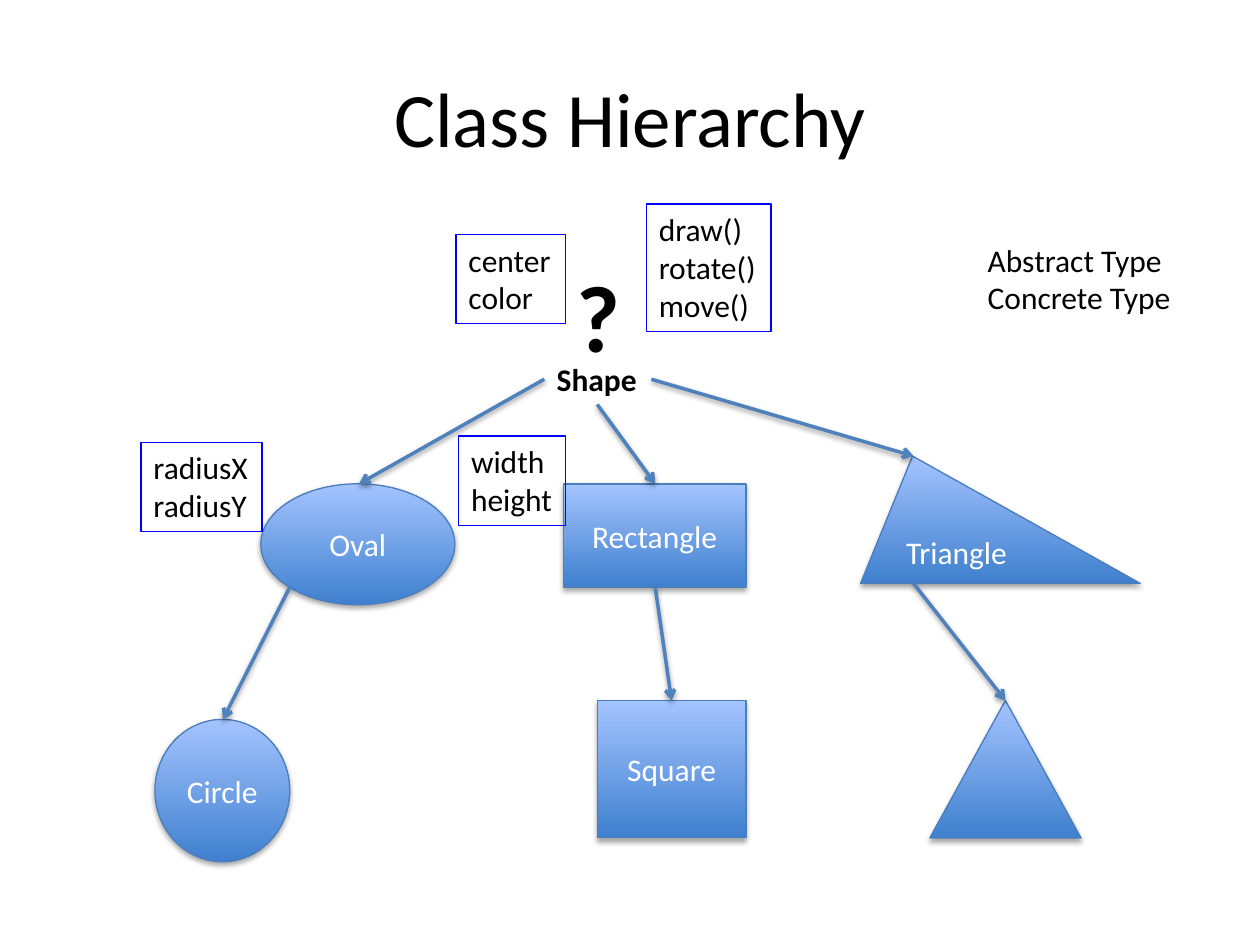
from lxml import etree
from pptx import Presentation
from pptx.dml.color import RGBColor
from pptx.enum.shapes import MSO_CONNECTOR, MSO_SHAPE
from pptx.enum.text import MSO_ANCHOR, MSO_AUTO_SIZE, PP_ALIGN
from pptx.oxml.ns import qn
from pptx.util import Emu, Pt

EMU_PER_PX = 9144  # 100 px to the inch
TITLE_ONLY = 5
OVAL, RECT, TRIANGLE = MSO_SHAPE.OVAL, MSO_SHAPE.RECTANGLE, MSO_SHAPE.ISOSCELES_TRIANGLE
STRAIGHT = MSO_CONNECTOR.STRAIGHT
LEFT, CENTER = PP_ALIGN.LEFT, PP_ALIGN.CENTER
TOP, MIDDLE = MSO_ANCHOR.TOP, MSO_ANCHOR.MIDDLE
FIT_SHAPE = MSO_AUTO_SIZE.SHAPE_TO_FIT_TEXT


def px(length):
    return Emu(length * EMU_PER_PX)


def rgb(color):
    return RGBColor.from_string(color)


class Diagram:
    font = "Calibri"
    black, white = "000000", "FFFFFF"
    fill_bottom, fill_top, outline = "3F80CE", "A4C4FF", "4B7EBC"
    arrow_color, member_border = "4F81BD", "0000FF"

    def __init__(self, slide):
        self.slide = slide

    def add_lines(self, frame, lines, color, size=18, bold=False, align=LEFT, anchor=TOP):
        frame.vertical_anchor = anchor
        for index, line in enumerate(lines):
            paragraph = frame.add_paragraph() if index else frame.paragraphs[0]
            paragraph.alignment = align
            run = paragraph.add_run()
            run.text = line
            run.font.name, run.font.size, run.font.bold = self.font, Pt(size), bold
            run.font.color.rgb = rgb(color)

    def shadow(self, effects, opacity, distance):
        outer = etree.SubElement(effects, qn("a:outerShdw"), blurRad=str(Pt(3.1)),
                                 dist=str(Pt(distance)), dir="5400000", rotWithShape="0")
        color = etree.SubElement(outer, qn("a:srgbClr"), val=self.black)
        etree.SubElement(color, qn("a:alpha"), val=str(opacity * 1000))

    def title(self, text, box):
        title = self.slide.shapes.title
        title.left, title.top, title.width, title.height = map(px, box)
        self.add_lines(title.text_frame, [text], self.black, 44, align=CENTER, anchor=MIDDLE)

    def label(self, lines, box, size=18, bold=False):
        frame = self.slide.shapes.add_textbox(*map(px, box)).text_frame
        frame.word_wrap, frame.auto_size = False, FIT_SHAPE
        self.add_lines(frame, lines, self.black, size, bold)

    def members(self, lines, box):
        border = self.slide.shapes.add_shape(RECT, *map(px, box))
        border.shadow.inherit = False
        border.fill.background()
        border.line.color.rgb = rgb(self.member_border)
        border.line.width = Pt(0.75)
        frame = border.text_frame
        frame.word_wrap, frame.auto_size = False, FIT_SHAPE
        self.add_lines(frame, lines, self.black)

    def figure(self, preset, box, text="", apex=None, side_inset=10):
        figure = self.slide.shapes.add_shape(preset, *map(px, box))
        if apex is not None:
            figure.adjustments[0] = apex
        figure.fill.gradient()
        figure.fill.gradient_angle = 90
        for stop, color in zip(figure.fill.gradient_stops, (self.fill_bottom, self.fill_top)):
            stop.color.rgb = rgb(color)
        figure.line.color.rgb = rgb(self.outline)
        figure.line.width = Pt(0.75)
        figure.shadow.inherit = False
        self.shadow(figure._element.spPr.find(qn("a:effectLst")), 35, 1.8)
        if text:
            frame = figure.text_frame
            frame.margin_left = frame.margin_right = px(side_inset)
            self.add_lines(frame, [text], self.white, align=CENTER, anchor=MIDDLE)

    def arrow(self, start, end):
        arrow = self.slide.shapes.add_connector(STRAIGHT, *map(px, start + end))
        arrow.line.color.rgb = rgb(self.arrow_color)
        arrow.line.width = Pt(2)
        properties = arrow._element.spPr
        etree.SubElement(properties.find(qn("a:ln")), qn("a:tailEnd"), type="arrow")
        self.shadow(etree.SubElement(properties, qn("a:effectLst")), 38, 1.6)


def main():
    deck = Presentation()
    deck.slide_width, deck.slide_height = px(1000), px(750)
    diagram = Diagram(deck.slides.add_slide(deck.slide_layouts[TITLE_ONLY]))
    diagram.title("Class Hierarchy", (50, 30, 900, 125))

    # Abstract base class
    diagram.label(["?"], (448, 200, 55, 101), size=54, bold=True)
    diagram.label(["Shape"], (432, 281, 85, 40), bold=True)

    # Concrete classes and their special cases
    diagram.figure(OVAL, (207, 384, 154, 96), "Oval")
    diagram.figure(OVAL, (123, 571, 107, 113), "Circle", side_inset=0)
    diagram.figure(RECT, (447, 384, 145, 82), "Rectangle")
    diagram.figure(RECT, (474, 556, 118, 109), "Square")
    diagram.figure(TRIANGLE, (683, 362, 222, 101), "Triangle", apex=0.186)
    diagram.figure(TRIANGLE, (738, 556, 120, 109))

    # Inheritance arrows
    for start, end in (
        ((432, 301), (285, 384)),
        ((474, 321), (520, 384)),
        ((517, 301), (725, 362)),
        ((230, 466), (177, 571)),
        ((520, 466), (533, 556)),
        ((725, 463), (798, 556)),
    ):
        diagram.arrow(start, end)

    # Fields and methods
    diagram.members(["center", "color"], (362, 186, 87, 71))
    diagram.members(["draw()", "rotate()", "move()"], (513, 162, 99, 101))
    diagram.members(["radiusX", "radiusY"], (112, 351, 96, 71))
    diagram.members(["width", "height"], (364, 346, 85, 71))

    # Kinds of type
    diagram.label(["Abstract Type", "Concrete Type"], (774, 186, 169, 71))

    deck.save("out.pptx")


if __name__ == "__main__":
    main()
